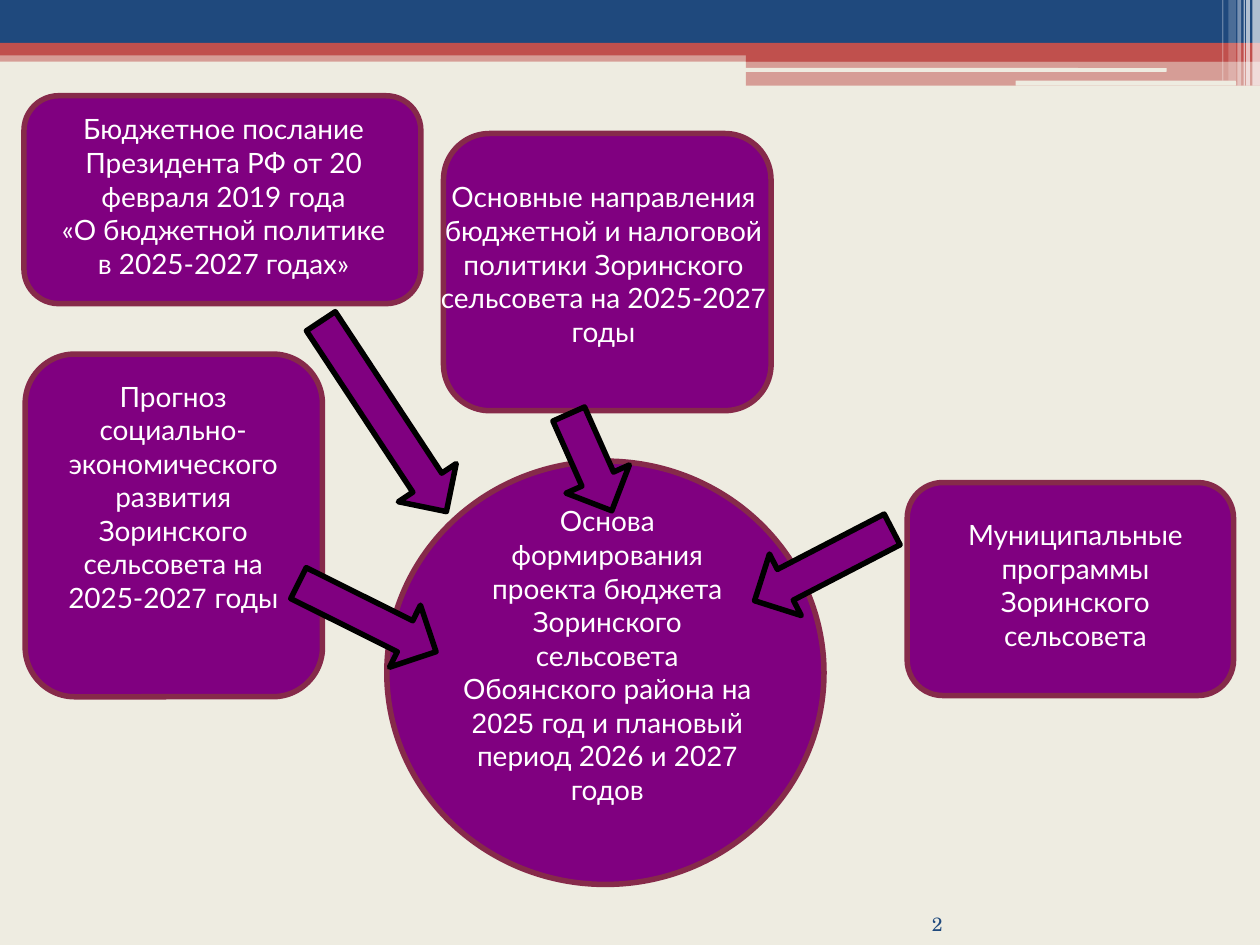
from itertools import cycle
from typing import NamedTuple

from pptx import Presentation
from pptx.dml.color import RGBColor
from pptx.enum.shapes import MSO_SHAPE as SHAPE
from pptx.enum.text import MSO_ANCHOR as ANCHOR, PP_ALIGN as ALIGN
from pptx.oxml.ns import qn
from pptx.oxml.xmlchemy import OxmlElement
from pptx.util import Inches, Pt

NAVY, RED, CREAM, WHITE = "1F497D", "C0504D", "EEECE1", "FFFFFF"
PURPLE, MAROON, BLACK = "800080", "862A4A", "000000"
BODY_FONTS = ("Lato", "Arial")


class Box(NamedTuple):
    left: float
    top: float
    width: float
    height: float


class Band(NamedTuple):
    box: Box
    color: str
    opacity: int = 100
    kind: SHAPE = SHAPE.RECTANGLE


class Panel(NamedTuple):
    box: Box
    kind: SHAPE = SHAPE.ROUNDED_RECTANGLE


class Label(NamedTuple):
    box: Box
    text: str
    fill: str = ""


class Arrow(NamedTuple):
    box: Box
    rotation: float


BANDS = [
    Band(Box(0, 0.4, 10, 0.09), RED, 50),
    Band(Box(0, 0, 10, 0.34), NAVY),
    Band(Box(0, 0.34, 10, 0.1), RED),
    Band(Box(5.92, 0.39, 4.08, 0.1), RED),
    Band(Box(5.92, 0.48, 4.08, 0.2), RED, 50),
    Band(Box(5.91, 0.54, 3.35, 0.03), CREAM, kind=SHAPE.ROUNDED_RECTANGLE),
    Band(Box(8.06, 0.64, 1.75, 0.04), CREAM, kind=SHAPE.ROUNDED_RECTANGLE),
    Band(Box(9.94, 0, 0.06, 0.68), WHITE, 65),
    Band(Box(9.89, 0, 0.03, 0.68), WHITE, 65),
    Band(Box(9.87, 0, 0.01, 0.68), WHITE, 60),
    Band(Box(9.82, 0, 0.03, 0.68), WHITE, 40),
    Band(Box(9.75, 0, 0.06, 0.64), WHITE, 20),
    Band(Box(9.7, 0, 0.01, 0.64), WHITE, 30),
]

PANELS = [
    Panel(Box(3.07, 3.66, 3.47, 3.36), SHAPE.OVAL),
    Panel(Box(0.19, 0.76, 3.15, 1.65)),
    Panel(Box(0.2, 2.81, 2.36, 2.72)),
    Panel(Box(7.2, 3.83, 2.59, 1.69)),
    Panel(Box(3.52, 1.06, 2.6, 2.2)),
]

LABELS = [
    Label(Box(7.43, 4.06, 2.21, 1.17),
          "Муниципальные программы Зоринского сельсовета"),
    Label(Box(0.27, 2.96, 2.21, 2.26),
          "Прогноз\nсоциально-\nэкономического\nразвития\n"
          "Зоринского сельсовета на 2025-20|27 |годы"),
    Label(Box(0.35, 0.84, 2.85, 1.44),
          "Бюджетное послание\nПрезидента РФ от 20 февраля 2019 года\n"
          "«О бюджетной политике в 2025-2027 годах»", PURPLE),
    Label(Box(3.56, 3.95, 2.52, 2.51),
          "Основа формирования\nпроекта бюджета Зоринского сельсовета\n"
          "Обоянского района на |2025 |год и плановый период 2026 и 20|27 |годов"),
    Label(Box(3.37, 1.38, 2.84, 1.44),
          "Основные направления бюджетной и налоговой политики "
          "Зоринского сельсовета на 2025-20|27| годы"),
]

ARROWS = [
    Arrow(Box(6.26, 3.87, 0.55, 1.23), 62.6),
    Arrow(Box(2.77, 2.4, 0.55, 1.81), 326.6),
    Arrow(Box(2.64, 4.29, 0.55, 1.22), 296.5),
    Arrow(Box(4.41, 3.25, 0.55, 0.84), 336),
]


def paint(target, color: str) -> None:
    target.solid()
    target.fore_color.rgb = RGBColor.from_string(color)


def add_shape(slide, kind: SHAPE, box: Box, fill: str, line: str = ""):
    sp = slide.shapes.add_shape(kind, *map(Inches, box))
    sp.shadow.inherit = False
    paint(sp.fill, fill)
    if line:
        paint(sp.line.fill, line)
        sp.line.width = Pt(3.15)
    else:
        sp.line.fill.background()
    return sp


def add_band(slide, band: Band) -> None:
    sp = add_shape(slide, band.kind, band.box, band.color)
    if band.opacity < 100:
        alpha = OxmlElement("a:alpha")
        alpha.set("val", str(band.opacity * 1000))
        sp._element.spPr.find(qn("a:solidFill")).find(qn("a:srgbClr")).append(alpha)


def style_run(r, font: str, size: float, color: str) -> None:
    r.font.name = font
    r.font.size = Pt(size)
    paint(r.font.fill, color)


def add_label(slide, label: Label) -> None:
    sp = slide.shapes.add_textbox(*map(Inches, label.box))
    if label.fill:
        paint(sp.fill, label.fill)
    tf = sp.text_frame
    tf.word_wrap = True
    tf.text = label.text
    for p in tf.paragraphs:
        parts = p.text.split("|")
        p.text = parts[0]
        p.alignment = ALIGN.CENTER
        for part in parts[1:]:
            p.add_run().text = part
        for r, font in zip(p.runs, cycle(BODY_FONTS)):
            style_run(r, font, 16, WHITE)


def add_arrow(slide, arrow: Arrow) -> None:
    sp = add_shape(slide, SHAPE.DOWN_ARROW, arrow.box, PURPLE, BLACK)
    sp.rotation = arrow.rotation


def add_page_number(slide, box: Box, number: str) -> None:
    tf = slide.shapes.add_textbox(*map(Inches, box)).text_frame
    tf.margin_left = tf.margin_right = tf.margin_top = tf.margin_bottom = 0
    tf.word_wrap = True
    tf.vertical_anchor = ANCHOR.BOTTOM
    tf.text = number
    p = tf.paragraphs[0]
    p.alignment = ALIGN.RIGHT
    style_run(p.runs[0], "TeX Gyre Schola", 11, NAVY)


def main() -> None:
    prs = Presentation()
    prs.slide_width, prs.slide_height = Inches(10), Inches(7.5)
    slide = prs.slides.add_slide(prs.slide_layouts[6])
    paint(slide.background.fill, CREAM)
    for band in BANDS:
        add_band(slide, band)
    add_page_number(slide, Box(6.84, 7.17, 0.64, 0.25), "2")
    for panel in PANELS:
        add_shape(slide, panel.kind, panel.box, PURPLE, MAROON)
    for label in LABELS:
        add_label(slide, label)
    for arrow in ARROWS:
        add_arrow(slide, arrow)
    prs.save("out.pptx")


if __name__ == "__main__":
    main()
